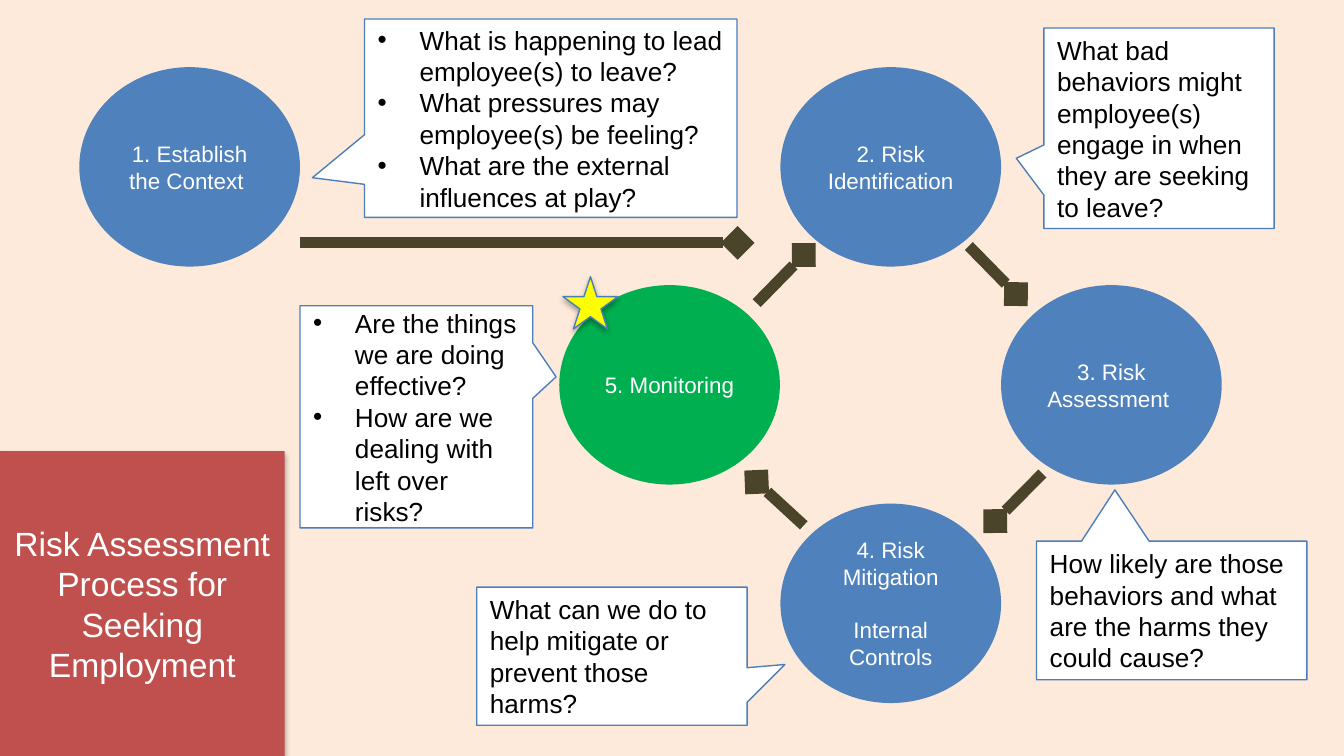
from lxml.etree import SubElement
from pptx import Presentation
from pptx.dml.color import RGBColor
from pptx.enum.shapes import MSO_CONNECTOR, MSO_SHAPE
from pptx.enum.text import MSO_ANCHOR, PP_ALIGN
from pptx.oxml.ns import qn
from pptx.util import Cm, Pt

WHITE = RGBColor(0xFF, 0xFF, 0xFF)
BLACK = RGBColor(0x00, 0x00, 0x00)
PEACH = RGBColor(0xFD, 0xEA, 0xDA)
BLUE = RGBColor(0x4F, 0x81, 0xBD)
OUTLINE = RGBColor(0x4B, 0x7E, 0xBC)
GREEN = RGBColor(0x00, 0xB0, 0x50)
RED = RGBColor(0xC0, 0x50, 0x4D)
YELLOW = RGBColor(0xFF, 0xFF, 0x00)
BROWN = RGBColor(0x4A, 0x45, 0x2A)

SLIDE_WIDTH, SLIDE_HEIGHT = 25.4, 14.29

deck = Presentation()
deck.slide_width, deck.slide_height = Cm(SLIDE_WIDTH), Cm(SLIDE_HEIGHT)
page = deck.slides.add_slide(deck.slide_layouts[6])


def add_box(kind, place, fill, outline=None, shadow=False):
    """Add a filled shape; place is left, top, width, height in cm."""
    box = page.shapes.add_shape(kind, *map(Cm, place))
    box.fill.solid()
    box.fill.fore_color.rgb = fill
    if outline is None:
        box.line.fill.background()
    else:
        box.line.color.rgb = outline
        box.line.width = Pt(0.75)
    box.shadow.inherit = False
    if shadow:
        effects = box._element.spPr.find(qn("a:effectLst"))
        outer = SubElement(effects, qn("a:outerShdw"), blurRad=str(Pt(3.1)),
                           dist=str(Pt(1.8)), dir="5400000", rotWithShape="0")
        color = SubElement(outer, qn("a:srgbClr"), val="000000")
        SubElement(color, qn("a:alpha"), val="35000")
    return box


def write(box, *lines, size, color, align=PP_ALIGN.LEFT, gap=0, bullets=False):
    """Write one paragraph per line, with gap points between them."""
    frame = box.text_frame
    frame.word_wrap = True
    frame.vertical_anchor = MSO_ANCHOR.MIDDLE
    for index, line in enumerate(lines):
        para = frame.add_paragraph() if index else frame.paragraphs[0]
        para.alignment = align
        if index:
            para.space_before = Pt(gap)
        if bullets:
            properties = para._p.get_or_add_pPr()
            properties.set("marL", str(Cm(0.79)))
            properties.set("indent", str(-Cm(0.79)))
            SubElement(properties, qn("a:buFont"), typeface="Arial")
            SubElement(properties, qn("a:buChar"), char="•")
        span = para.add_run()
        span.text = line
        span.font.name = "Arial"
        span.font.size = Pt(size)
        span.font.color.rgb = color


add_box(MSO_SHAPE.RECTANGLE, (0, 0, SLIDE_WIDTH, SLIDE_HEIGHT), PEACH, shadow=True)

# Process steps
steps = [
    (1.5, 1.27, BLUE, ["1. Establish the Context "]),
    (10.57, 5.39, GREEN, ["5. Monitoring"]),
    (18.92, 5.39, BLUE, ["3. Risk Assessment "]),
    (14.75, 1.27, BLUE, ["2. Risk Identification"]),
    (14.75, 9.52, BLUE, ["4. Risk Mitigation", "Internal Controls"]),
]
for left, top, fill, lines in steps:
    step = add_box(MSO_SHAPE.OVAL, (left, top, 4.17, 3.77), fill)
    write(step, *lines, size=12, color=WHITE, align=PP_ALIGN.CENTER, gap=14)

# Arrows between the steps
arrows = [
    (5.67, 4.59, 13.94, 4.59),
    (18.31, 4.65, 19.2, 5.56),
    (19.7, 8.95, 18.81, 9.85),
    (15.19, 9.93, 14.3, 9.11),
    (14.3, 5.73, 15.19, 4.82),
]
for ends in arrows:
    arrow = page.shapes.add_connector(MSO_CONNECTOR.STRAIGHT, *map(Cm, ends))
    arrow.line.color.rgb = BROWN
    arrow.line.width = Pt(6)
    properties = arrow._element.spPr
    SubElement(properties.find(qn("a:ln")), qn("a:tailEnd"), type="diamond")
    SubElement(properties, qn("a:effectLst"))

# Questions: place, pointer tip, lines
questions = [
    ((19.73, 0.53, 4.35, 3.79), (-0.62, 0.15),
     ["What bad behaviors might employee(s) engage in when they are seeking to leave?"]),
    ((9.01, 11.1, 5.11, 2.61), (0.64, 0.06),
     ["What can we do to help mitigate or prevent those harms?"]),
    ((19.59, 10.23, 5.11, 2.62), (-0.21, -0.87),
     ["How likely are those behaviors and what are the harms they could cause?"]),
    ((5.67, 5.78, 4.4, 4.2), (0.6, -0.18),
     ["Are the things we are doing effective?",
      "How are we dealing with left over risks?"]),
    ((6.89, 0.36, 7.04, 3.75), (-0.64, 0.3),
     ["What is happening to lead employee(s) to leave?",
      "What pressures may employee(s) be feeling?",
      "What are the external influences at play?"]),
]
for place, tip, lines in questions:
    callout = add_box(MSO_SHAPE.RECTANGULAR_CALLOUT, place, WHITE, OUTLINE)
    callout.adjustments[0], callout.adjustments[1] = tip
    write(callout, *lines, size=14, color=BLACK, bullets=len(lines) > 1)

title = add_box(MSO_SHAPE.RECTANGLE, (0, 8.53, 5.38, 5.76), RED, shadow=True)
write(title, "Risk Assessment Process for Seeking Employment",
      size=18, color=WHITE, align=PP_ALIGN.CENTER)

add_box(MSO_SHAPE.STAR_5_POINT, (10.64, 5.23, 1.04, 0.99), YELLOW, OUTLINE, shadow=True)

deck.save("out.pptx")
